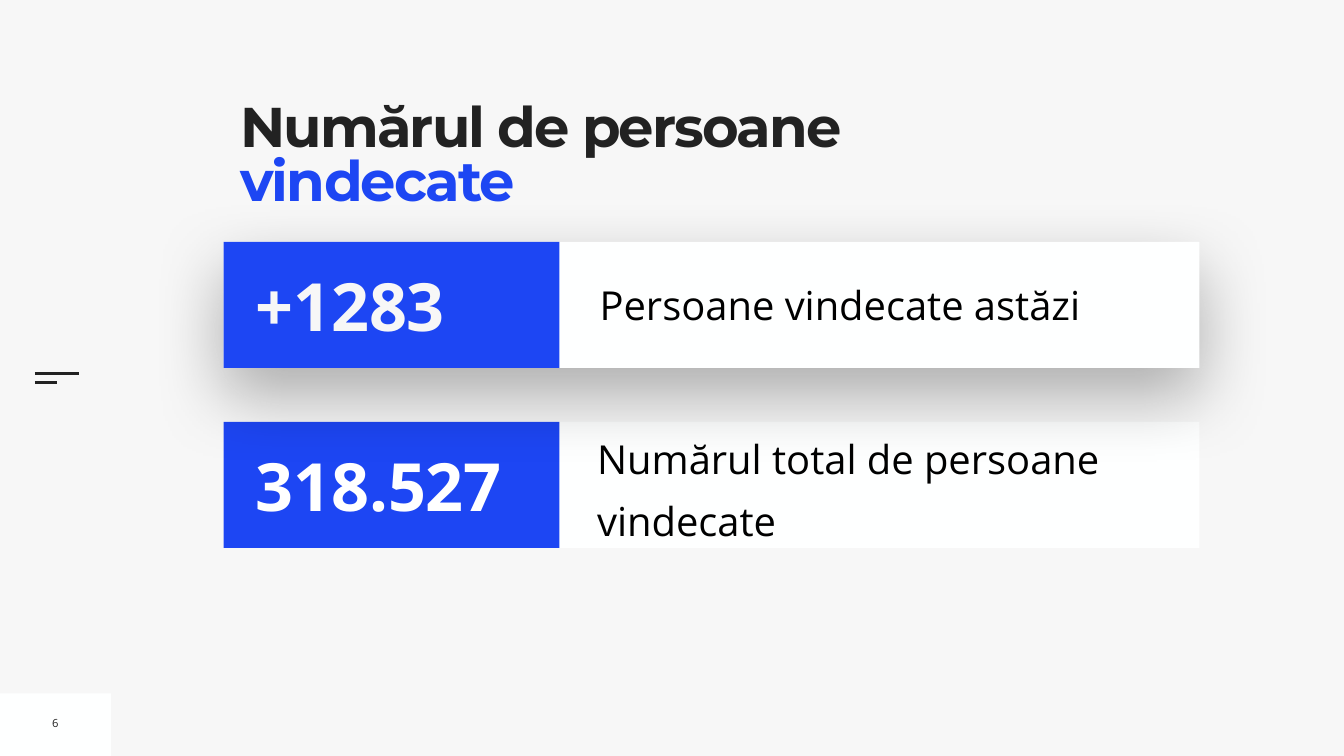
from dataclasses import dataclass, field

from lxml import etree
from pptx import Presentation
from pptx.dml.color import RGBColor
from pptx.enum.shapes import MSO_CONNECTOR, MSO_SHAPE
from pptx.enum.text import MSO_ANCHOR, MSO_AUTO_SIZE, PP_ALIGN
from pptx.oxml.ns import qn
from pptx.util import Pt

RECT = MSO_SHAPE.RECTANGLE
STRAIGHT = MSO_CONNECTOR.STRAIGHT
TOP, MIDDLE = MSO_ANCHOR.TOP, MSO_ANCHOR.MIDDLE
GROW, FIXED = MSO_AUTO_SIZE.SHAPE_TO_FIT_TEXT, MSO_AUTO_SIZE.NONE
CENTER = PP_ALIGN.CENTER

EMU_PER_PX = 9144  # 100 px to the inch
ROW_LEFT, ROW_W, ROW_H, BADGE_W = 444, 1936, 250, 666


@dataclass(frozen=True)
class Theme:
    paper: str = "F7F7F7"
    white: str = "FFFFFF"
    panel: str = "FEFFFF"
    ink: str = "222222"
    black: str = "000000"
    blue: str = "1D46F3"
    heading: str = "Montserrat"
    body: str = "Open Sans"
    title_size: int = 80
    number_size: int = 95
    label_size: int = 57
    page_size: int = 16


T = Theme()


@dataclass(frozen=True)
class Box:
    x: int
    y: int
    w: int
    h: int

    def emu(self) -> list[int]:
        return [px(v) for v in (self.x, self.y, self.w, self.h)]


@dataclass(frozen=True)
class Run:
    text: str
    size: int
    color: str
    font: str = T.body
    bold: bool = False
    tracking: int = 0  # hundredths of a point


@dataclass(frozen=True)
class StatRow:
    top: int
    number: str
    number_color: str
    label: str
    label_box: Box
    label_inset: int = 10
    label_format: dict = field(default_factory=dict)
    raised: bool = False


ROWS = [
    StatRow(837, "318.527", T.white, "Numărul total de persoane vindecate",
            Box(1185, 839, 1195, 236), label_inset=0,
            label_format={"line_spacing": 1.3, "space_before": Pt(20)}),
    StatRow(480, "+1283", T.paper, "Persoane vindecate astăzi",
            Box(1180, 547, 1176, 116), raised=True),
]


def px(v: int) -> int:
    return v * EMU_PER_PX


def set_all(target, values: dict) -> None:
    for name, value in values.items():
        setattr(target, name, value)


def add_rect(s, box: Box, color: str):
    sp = s.shapes.add_shape(RECT, *box.emu())
    sp.shadow.inherit = False
    sp.fill.solid()
    sp.fill.fore_color.rgb = RGBColor.from_string(color)
    sp.line.fill.background()
    return sp


def add_soft_shadow(sp) -> None:
    effects = sp._element.spPr.find(qn("a:effectLst"))
    shadow = etree.SubElement(effects, qn("a:outerShdw"), {
        "blurRad": str(Pt(100)), "dist": str(Pt(40)),
        "dir": "5400000", "rotWithShape": "0"})
    color = etree.SubElement(shadow, qn("a:srgbClr"), val=T.black)
    etree.SubElement(color, qn("a:alpha"), val="30000")


def add_text(s, box: Box, runs: list[Run], inset: int = 10, anchor=MIDDLE,
             size_mode=GROW, wrap: bool = True, paragraph: dict | None = None):
    sp = s.shapes.add_textbox(*box.emu())
    tf = sp.text_frame
    margins = {f"margin_{side}": px(inset)
               for side in ("left", "top", "right", "bottom")}
    set_all(tf, margins | {"word_wrap": wrap, "auto_size": size_mode,
                           "vertical_anchor": anchor})
    p = tf.paragraphs[0]
    set_all(p, paragraph or {})
    for run in runs:
        r = p.add_run()
        r.text = run.text
        set_all(r.font, {"name": run.font, "size": Pt(run.size), "bold": run.bold})
        r.font.color.rgb = RGBColor.from_string(run.color)
        if run.tracking:
            r.font._element.set("spc", str(run.tracking))
    return sp


def add_rule(s, x: int, y: int, length: int) -> None:
    line = s.shapes.add_connector(STRAIGHT, px(x), px(y), px(x + length), px(y))
    line.line.width = Pt(3)
    line.line.color.rgb = RGBColor.from_string(T.ink)
    etree.SubElement(line._element.spPr, qn("a:effectLst"))


def add_stat_row(s, row: StatRow) -> None:
    panel = add_rect(s, Box(ROW_LEFT, row.top, ROW_W, ROW_H), T.panel)
    if row.raised:
        add_soft_shadow(panel)
    add_text(s, row.label_box, [Run(row.label, T.label_size, T.black)],
             inset=row.label_inset, paragraph=row.label_format)
    add_rect(s, Box(ROW_LEFT, row.top, BADGE_W, ROW_H), T.blue)
    add_text(s, Box(ROW_LEFT + 53, row.top + 35, 603, 180),
             [Run(row.number, T.number_size, row.number_color, bold=True)])


def add_title(s) -> None:
    words = [("Numărul de persoane ", T.ink), ("vindecate", T.blue)]
    runs = [Run(text, T.title_size, color, T.heading, True, -270)
            for text, color in words]
    sp = add_text(s, Box(477, 207, 1301, 273), runs, inset=0, anchor=TOP,
                  size_mode=FIXED, paragraph={"line_spacing": 0.8})
    sp.fill.solid()
    sp.fill.fore_color.rgb = RGBColor.from_string(T.paper)


def main() -> None:
    prs = Presentation()
    prs.slide_width, prs.slide_height = px(2667), px(1500)
    s = prs.slides.add_slide(prs.slide_layouts[6])
    s.background.fill.solid()
    s.background.fill.fore_color.rgb = RGBColor.from_string(T.paper)

    add_rect(s, Box(0, 1376, 220, 124), T.panel)
    for y, length in ((741, 88), (759, 44)):
        add_rule(s, 69, y, length)
    add_title(s)
    add_text(s, Box(93, 1409, 34, 51), [Run("6", T.page_size, T.ink)],
             wrap=False, paragraph={"alignment": CENTER})
    for row in ROWS:
        add_stat_row(s, row)
    prs.save("out.pptx")


if __name__ == "__main__":
    main()
